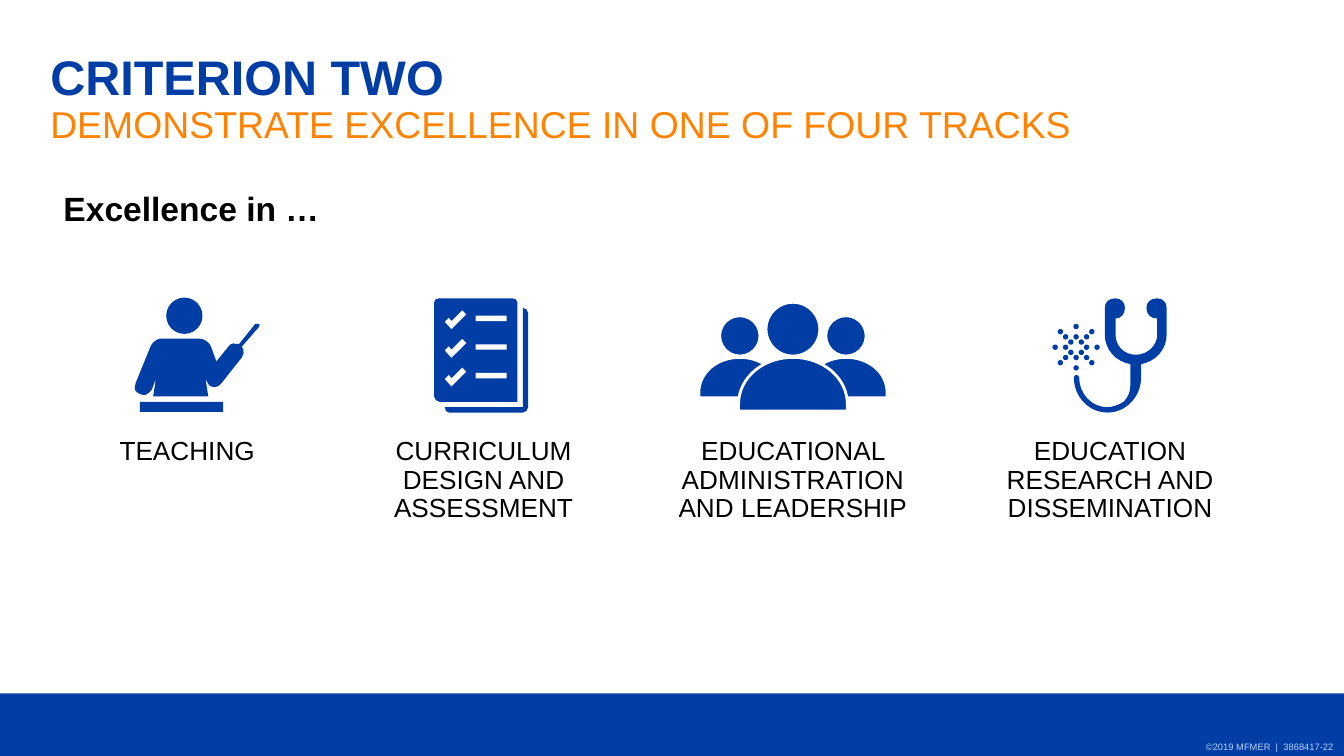
from dataclasses import dataclass

from lxml import etree
from pptx import Presentation
from pptx import util as u
from pptx.dml.color import RGBColor
from pptx.enum import shapes, text
from pptx.oxml.ns import qn

BLUE = RGBColor(0x00, 0x3D, 0xA5)
ORANGE = RGBColor(0xFF, 0x82, 0x00)
PALE_BLUE = RGBColor(0xBA, 0xD4, 0xFF)
BLACK = RGBColor(0, 0, 0)
WHITE = RGBColor(255, 255, 255)
FONT = "Arial"
GRID = u.Cm(0.0254)  # one step of the grid on which the icons are drawn
RECTANGLE = shapes.MSO_SHAPE.RECTANGLE
OVAL = shapes.MSO_SHAPE.OVAL


@dataclass
class Label:
    words: str
    left: float
    width: float
    height: float = 1.88
    wrap: bool = True


@dataclass
class Person:
    center: float
    head_top: float
    head_size: float
    half_width: float
    shoulder_bottom: float
    bottom: float


LABELS = [
    Label("TEACHING", 1.98, 3.12, 0.79, False),
    Label("CURRICULUM DESIGN AND ASSESSMENT", 6.98, 4.32),
    Label("EDUCATIONAL ADMINISTRATION AND LEADERSHIP", 12.42, 5.13),
    Label("EDUCATION RESEARCH AND DISSEMINATION", 18.63, 4.7),
]
PEOPLE = [
    Person(550.5, 235, 30, 30.5, 292, 296),
    Person(629.5, 235, 30, 30.5, 292, 296),
    Person(590, 225, 40, 40.5, 301, 306),
]

# Outlines in grid steps: a pair is a corner, six numbers are a cubic curve.
TEACHER_BODY = [
    (155, 295), (153, 282), (154, 284), (156, 289, 161, 290, 165, 285),
    (180, 266), (181, 264, 182, 262, 181, 260), (180, 258), (193, 243),
    (193, 243, 193, 242, 193, 241), (192, 241, 191, 241, 190, 241),
    (178, 256), (175, 256), (174, 255, 171, 256, 170, 258), (161, 269),
    (157, 258), (156, 255, 152, 252, 148, 252), (120, 252),
    (117, 252, 113, 255, 112, 258), (101, 285),
    (100, 287, 100, 290, 101, 291), (102, 292),
    (103, 293, 106, 294, 107, 294), (108, 294),
    (110, 293, 112, 292, 113, 290), (116, 282), (114, 295),
]
STETHOSCOPE = [
    (861, 222), (856, 222, 853, 225, 853, 229), (853, 234, 856, 237, 861, 237),
    (861, 249), (861, 257, 854, 264, 845, 264), (836, 264, 830, 257, 830, 249),
    (830, 237), (834, 237, 837, 234, 837, 229), (837, 225, 834, 222, 830, 222),
    (825, 222, 822, 225, 822, 229), (822, 249),
    (822, 260, 830, 269, 841, 271), (841, 287),
    (841, 292, 839, 296, 836, 299), (833, 301, 828, 303, 824, 303),
    (812, 303, 803, 293, 803, 281), (803, 280, 802, 279, 801, 279),
    (800, 279, 799, 280, 799, 281), (799, 295, 810, 307, 824, 307),
    (838, 307, 849, 295, 849, 281), (849, 271),
    (860, 269, 868, 260, 868, 249), (868, 229), (868, 225, 865, 222, 861, 222),
]
BACK_PAGE = [
    (389, 229), (389, 303), (331, 303), (331, 305, 332, 307, 334, 307),
    (389, 307), (391, 307, 393, 305, 393, 303), (393, 233),
    (393, 231, 391, 229, 389, 229),
]
FRONT_PAGE = [
    (385, 299), (385, 225), (385, 223, 383, 222, 381, 222), (327, 222),
    (325, 222, 323, 223, 323, 225), (323, 295), (323, 297, 325, 299, 327, 299),
]
CHECK_MARK = [(336, 14), (331, 8.5), (334, 5.5), (336, 8), (344, 0), (347, 3)]


def paint(shape, fill: RGBColor, outlined: bool = False) -> None:
    shape.shadow.inherit = False
    shape.fill.solid()
    shape.fill.fore_color.rgb = fill
    if outlined:
        shape.line.color.rgb = WHITE
        shape.line.width = u.Pt(1.5)
    else:
        shape.line.fill.background()


def add_preset(group, kind, left: float, top: float, width: float, height: float,
               fill: RGBColor = BLUE, outlined: bool = False) -> None:
    box = [round(value * GRID) for value in (left, top, width, height)]
    paint(group.shapes.add_shape(kind, *box), fill, outlined)


def add_outline(group, outline: list, fill: RGBColor = BLUE, outlined: bool = False) -> None:
    """Draw the corners as a freeform, then bend the sides that are curves."""
    ends = [(round(node[-2] * GRID), round(node[-1] * GRID)) for node in outline]
    builder = group.shapes.build_freeform(*ends[0])
    builder.add_line_segments(ends[1:], close=True)
    shape = builder.convert_to_shape()
    left, top = (min(values) for values in zip(*ends))
    sides = list(shape._element.iter(qn("a:lnTo")))
    for node, side in zip(outline[1:], sides):
        if len(node) == 2:
            continue
        side.tag = qn("a:cubicBezTo")
        controls = [(node[0], node[1]), (node[2], node[3])]
        for position, (x, y) in enumerate(controls):
            point = etree.Element(qn("a:pt"))
            point.set("x", str(round(x * GRID) - left))
            point.set("y", str(round(y * GRID) - top))
            side.insert(position, point)
    paint(shape, fill, outlined)


def add_run(paragraph, words: str, size: float, color: RGBColor, bold: bool = False) -> None:
    run = paragraph.add_run()
    run.text = words
    run.font.name = FONT
    run.font.size = u.Pt(size)
    run.font.bold = bold
    run.font.color.rgb = color


def add_text_box(slide, left: float, top: float, width: float, height: float):
    box = slide.shapes.add_textbox(u.Cm(left), u.Cm(top), u.Cm(width), u.Cm(height))
    box.text_frame.word_wrap = True
    paragraph = box.text_frame.paragraphs[0]
    paragraph.line_spacing = 0.9
    return box.text_frame, paragraph


def add_label(slide, label: Label) -> None:
    frame, paragraph = add_text_box(slide, label.left, 8.16, label.width, label.height)
    frame.word_wrap = label.wrap
    frame.auto_size = text.MSO_AUTO_SIZE.SHAPE_TO_FIT_TEXT
    paragraph.alignment = text.PP_ALIGN.CENTER
    add_run(paragraph, label.words, 14, BLACK)


def add_title(slide) -> None:
    title = slide.shapes.title
    title.left, title.top = u.Cm(0.95), u.Cm(0)
    title.width, title.height = u.Cm(23.65), u.Cm(2.87)
    frame = title.text_frame
    frame.margin_left = frame.margin_right = 0
    frame.margin_top = frame.margin_bottom = u.Cm(0.1)
    frame.vertical_anchor = text.MSO_ANCHOR.BOTTOM
    frame.auto_size = text.MSO_AUTO_SIZE.NONE
    paragraph = frame.paragraphs[0]
    paragraph.alignment = text.PP_ALIGN.LEFT
    paragraph.line_spacing = 0.9
    add_run(paragraph, "CRITERION TWO", 26, BLUE, True)
    paragraph.add_line_break()
    add_run(paragraph, "DEMONSTRATE EXCELLENCE IN ONE OF FOUR TRACKS", 20, ORANGE)


def add_footer(slide) -> None:
    add_preset(slide, RECTANGLE, 0, 516, 1000, 46.5)
    frame, paragraph = add_text_box(slide, 19.49, 13.96, 5.92, 0.33)
    frame.margin_left = frame.margin_right = u.Cm(0.2)
    frame.margin_top = frame.margin_bottom = u.Cm(0.1)
    frame.vertical_anchor = text.MSO_ANCHOR.MIDDLE
    paragraph.alignment = text.PP_ALIGN.RIGHT
    paragraph.line_spacing = 1.0
    add_run(paragraph, "©2019 MFMER  |  3868417-22", 5, PALE_BLUE)


def draw_teacher(group) -> None:
    add_outline(group, TEACHER_BODY)
    add_preset(group, RECTANGLE, 104, 299, 62, 7.5)
    add_preset(group, OVAL, 123.7, 221.5, 27, 27)


def draw_checklist(group) -> None:
    add_outline(group, BACK_PAGE)
    add_outline(group, FRONT_PAGE)
    tops = [231 + row * 21.3 for row in range(3)]
    for top in tops:
        add_outline(group, [(x, y + top) for x, y in CHECK_MARK], WHITE)
    for top in tops:
        add_preset(group, RECTANGLE, 354, top + 4, 23, 4, WHITE)


def draw_person(group, person: Person) -> None:
    add_preset(group, OVAL, person.center - person.head_size / 2, person.head_top,
               person.head_size, person.head_size, outlined=True)
    center, top, side = person.center, 266, person.shoulder_bottom
    left, right = center - person.half_width, center + person.half_width
    bend = person.half_width * 0.56
    upper = top + (side - top) * 0.44
    add_outline(group, [
        (center, top), (center - bend, top, left, upper, left, side),
        (left, person.bottom), (right, person.bottom), (right, side),
        (right, upper, center + bend, top, center, top),
    ], outlined=True)


def draw_team(group) -> None:
    for person in PEOPLE:
        draw_person(group, person)


def draw_stethoscope(group) -> None:
    diagonals = [(x, y) for x in range(-3, 4) for y in {x, -x} if x]
    axes = [(x, 0) for x in (-4, -2, 2, 4)]
    for x, y in diagonals + axes + [(y, x) for x, y in axes]:
        add_preset(group, OVAL, 798.7 + x * 3.9, 256.4 + y * 3.85, 4, 4)
    add_outline(group, STETHOSCOPE)


def main() -> None:
    presentation = Presentation()
    presentation.slide_width, presentation.slide_height = u.Cm(25.4), u.Cm(14.29)
    slide = presentation.slides.add_slide(presentation.slide_layouts[5])
    add_footer(slide)
    for label in LABELS:
        add_label(slide, label)
    add_title(slide)
    _, heading = add_text_box(slide, 0.95, 3.51, 23.65, 1.32)
    add_run(heading, "Excellence in …", 18, BLACK, True)
    for draw in (draw_teacher, draw_stethoscope, draw_team, draw_checklist):
        draw(slide.shapes.add_group_shape())
    presentation.save("out.pptx")


if __name__ == "__main__":
    main()
